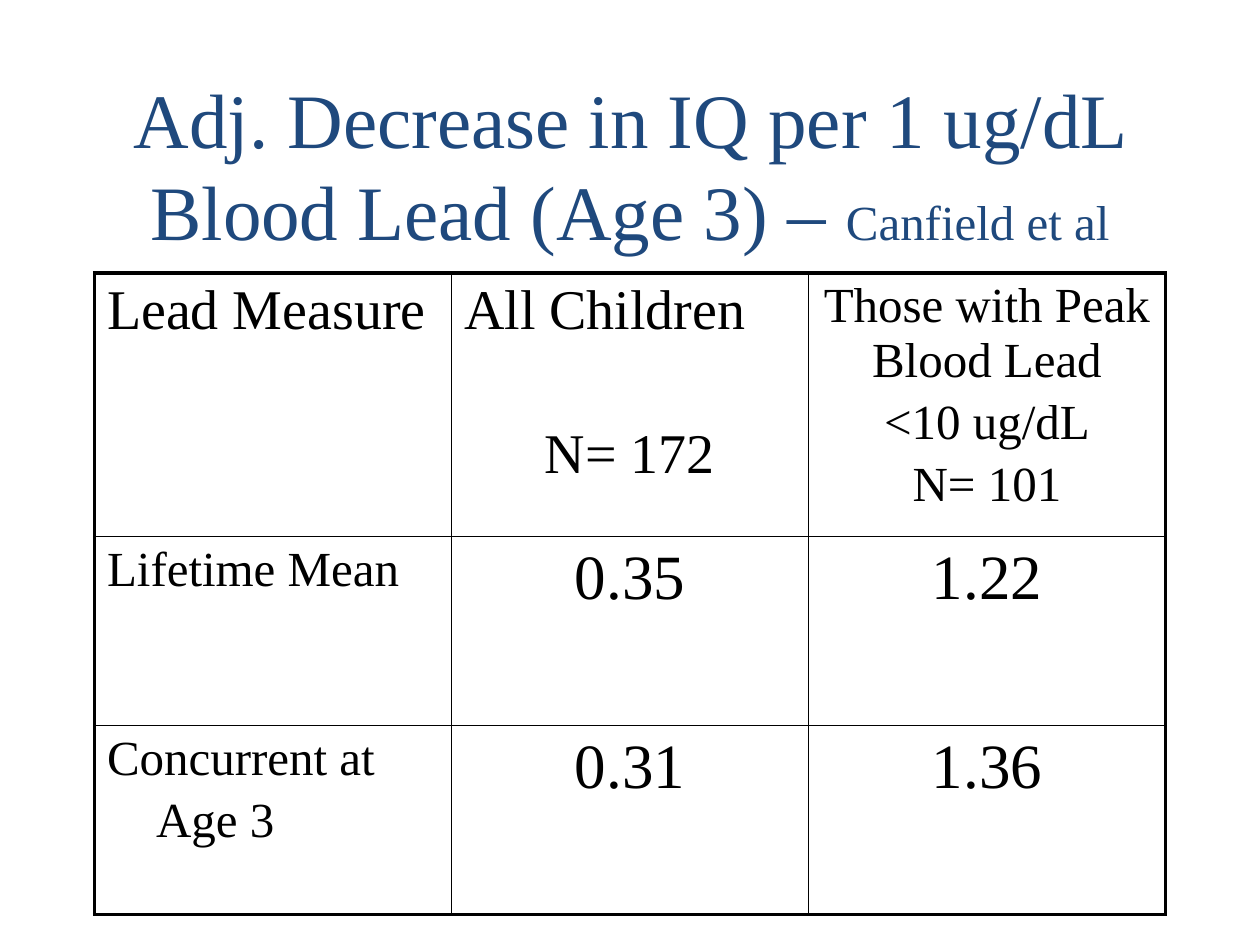
from dataclasses import dataclass

from lxml import etree
from pptx import Presentation
from pptx.dml.color import RGBColor
from pptx.enum.text import MSO_ANCHOR, PP_ALIGN
from pptx.oxml.ns import qn
from pptx.util import Pt

LEFT, CENTER = PP_ALIGN.LEFT, PP_ALIGN.CENTER
MIDDLE = MSO_ANCHOR.MIDDLE


@dataclass(frozen=True)
class Theme:
    font: str = "Times New Roman"
    title: RGBColor = RGBColor(0x1F, 0x49, 0x7D)
    ink: RGBColor = RGBColor(0, 0, 0)
    title_size: int = 44
    value_size: int = 36
    head_size: int = 32
    label_size: int = 28
    outer_line: float = 2.25
    inner_line: float = 1


@dataclass(frozen=True)
class Line:
    text: str
    size: int
    align: PP_ALIGN = LEFT
    before: float = 0
    indent: float = 0


T = Theme()
GAP = 4.5
BLANK_LINE_GAP = 47


def label(text, **options):
    return Line(text, T.label_size, **options)


def value(text):
    return [Line(text, T.value_size, CENTER)]


ROWS = [
    [
        [Line("Lead Measure", T.head_size)],
        [Line("All Children", T.head_size),
         Line("N= 172", T.head_size, CENTER, BLANK_LINE_GAP)],
        [label("Those with Peak Blood Lead", align=CENTER),
         label("<10 ug/dL", align=CENTER, before=GAP),
         label("N= 101", align=CENTER, before=GAP)],
    ],
    [[label("Lifetime Mean")], value("0.35"), value("1.22")],
    [
        [label("Concurrent at"), label("Age 3", before=GAP, indent=28)],
        value("0.31"),
        value("1.36"),
    ],
]
ROW_HEIGHTS = [143, 108, 108]
COLUMN_WIDTH = 204


def style_run(r, size, color):
    r.font.name = T.font
    r.font.size = Pt(size)
    r.font.color.rgb = color


def add_title(s):
    tf = s.shapes.add_textbox(Pt(54), Pt(48.5), Pt(612), Pt(90)).text_frame
    tf.word_wrap = True
    tf.vertical_anchor = MIDDLE
    p = tf.paragraphs[0]
    p.alignment = CENTER
    p.line_spacing = Pt(52.5)
    for text, size in [
        ("Adj. Decrease in IQ per 1 ug/dL Blood Lead (Age 3) – ", T.title_size),
        ("Canfield et al", T.label_size),
    ]:
        r = p.add_run()
        r.text = text
        style_run(r, size, T.title)


def set_borders(cell, widths):
    """Put borders, given by side (L, R, T, B), ahead of the cell's fill."""
    tc_pr = cell._tc.get_or_add_tcPr()
    for i, (side, width) in enumerate(widths.items()):
        ln = etree.Element(qn(f"a:ln{side}"), w=str(Pt(width)))
        fill = etree.SubElement(ln, qn("a:solidFill"))
        etree.SubElement(fill, qn("a:srgbClr"), val=str(T.ink))
        tc_pr.insert(i, ln)


def fill_cell(cell, lines):
    cell.fill.background()
    tf = cell.text_frame
    tf.text = "\n".join(line.text for line in lines)
    for p, line in zip(tf.paragraphs, lines):
        p.alignment = line.align
        p.space_before = Pt(line.before)
        if line.indent:
            p._p.get_or_add_pPr().set("marL", str(Pt(line.indent)))
        style_run(p.runs[0], line.size, T.ink)


def add_results_table(s):
    n_rows, n_cols = len(ROWS), len(ROWS[0])
    table = s.shapes.add_table(
        n_rows, n_cols, Pt(54), Pt(156),
        Pt(COLUMN_WIDTH * n_cols), Pt(sum(ROW_HEIGHTS)),
    ).table
    table.first_row = table.horz_banding = False
    for column in table.columns:
        column.width = Pt(COLUMN_WIDTH)
    for i, row in enumerate(ROWS):
        table.rows[i].height = Pt(ROW_HEIGHTS[i])
        for j, lines in enumerate(row):
            cell = table.cell(i, j)
            fill_cell(cell, lines)
            on_edge = {"L": j == 0, "R": j == n_cols - 1,
                       "T": i == 0, "B": i == n_rows - 1}
            set_borders(cell, {side: T.outer_line if edge else T.inner_line
                               for side, edge in on_edge.items()})


def main():
    prs = Presentation()
    prs.slide_width, prs.slide_height = Pt(720), Pt(540)
    s = prs.slides.add_slide(prs.slide_layouts[6])
    add_title(s)
    add_results_table(s)
    prs.save("out.pptx")


if __name__ == "__main__":
    main()
